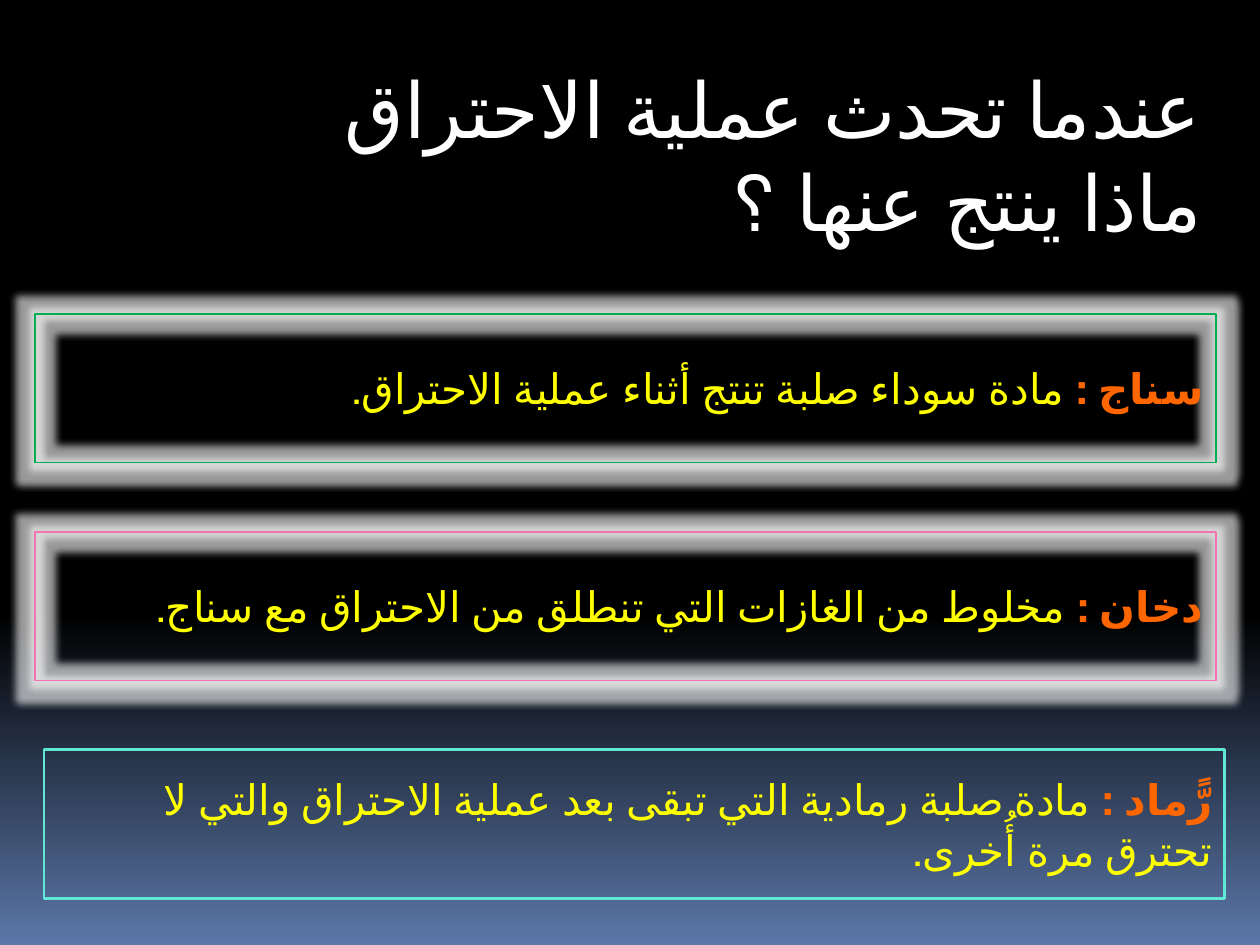
"""Build a slide on the products of combustion, with a title and three boxes."""
import copy
import pptx
import pptx.dml.color
import pptx.enum.lang
import pptx.enum.shapes
import pptx.enum.text
import pptx.oxml
import pptx.util

WIDE, HIGH = 10, 7.5
HALO = (
    '<a:effectLst xmlns:a="http://schemas.openxmlformats.org/drawingml/2006/main">'
    '<a:glow rad="101600"><a:srgbClr val="FFFFFF"><a:alpha val="60000"/></a:srgbClr></a:glow>'
    '</a:effectLst>'
)


def hue(code):
    return pptx.dml.color.RGBColor.from_string(code)


def write(para, text, size=24, color="FFFFFF", bold=False, face="Calibri"):
    run = para.add_run()
    run.text = text
    font = run.font
    font.size, font.bold, font.name = pptx.util.Pt(size), bold, face
    font.color.rgb = hue(color)
    font.language_id = pptx.enum.lang.MSO_LANGUAGE_ID.ARABIC


class Page:
    def __init__(self, deck):
        self.deck = deck
        deck.slide_width = pptx.util.Inches(WIDE)
        deck.slide_height = pptx.util.Inches(HIGH)
        self.slide = deck.slides.add_slide(deck.slide_layouts[5])
        self.term, self.body = "FF6600", "FFFF00"

    def place(self, x, y, w, h):
        wide, high = self.deck.slide_width, self.deck.slide_height
        return [round(part * full) for part, full in zip((x, y, w, h), (wide, high) * 2)]

    def para(self, frame):
        para = frame.paragraphs[0]
        para.alignment = pptx.enum.text.PP_ALIGN.RIGHT
        para._p.get_or_add_pPr().set("rtl", "1")
        return para

    def ground(self, stops, angle):
        fill = self.slide.background.fill
        fill.gradient()
        fill.gradient_angle = angle
        marks = self.slide._element.xpath(".//p:bg//a:gsLst")[0]
        while len(marks) < len(stops):
            marks.append(copy.deepcopy(marks[0]))
        for stop, (spot, color) in zip(fill.gradient_stops, stops):
            stop.position, stop.color.rgb = spot, hue(color)

    def title(self, text, area):
        shape = self.slide.shapes.title
        shape.left, shape.top, shape.width, shape.height = self.place(*area)
        frame = shape.text_frame
        frame.word_wrap = True
        frame.auto_size = pptx.enum.text.MSO_AUTO_SIZE.SHAPE_TO_FIT_TEXT
        frame.vertical_anchor = pptx.enum.text.MSO_ANCHOR.TOP
        write(self.para(frame), text, size=44)

    def box(self, term, text, area, color, width, halo):
        kind = pptx.enum.shapes.MSO_SHAPE.RECTANGLE
        shape = self.slide.shapes.add_shape(kind, *self.place(*area))
        shape.fill.background()
        shape.line.color.rgb = hue(color)
        shape.line.width = pptx.util.Pt(width)
        if halo:
            shape._element.spPr.append(pptx.oxml.parse_xml(HALO))
        else:
            shape.shadow.inherit = False
        frame = shape.text_frame
        frame.word_wrap = True
        frame.vertical_anchor = pptx.enum.text.MSO_ANCHOR.MIDDLE
        para = self.para(frame)
        write(para, term + " : ", color=self.term, bold=True)
        write(para, text, color=self.body)


def main():
    deck = pptx.Presentation()
    page = Page(deck)
    page.ground([(0, "000000"), (0.65, "000000"), (1, "5B77A8")], 270)
    page.title("عندما تحدث عملية الاحتراق ماذا ينتج عنها ؟",
               (1.77 / WIDE, 0.44 / HIGH, 7.87 / WIDE, 1.58 / HIGH))
    facts = [
        ("سناج", "مادة سوداء صلبة تنتج أثناء عملية الاحتراق.", 0.28, "00B050", 0.94, True),
        ("دخان", "مخلوط من الغازات التي تنطلق من الاحتراق مع سناج.", 0.28, "F273AF", 0.94, True),
        ("رًّماد", "مادة صلبة رمادية التي تبقى بعد عملية الاحتراق والتي لا تحترق مرة أُخرى.",
         0.35, "5FE8D6", 1.5, False),
    ]
    for row, (term, text, left, color, width, halo) in enumerate(facts):
        area = (left / WIDE, (2.49 + 1.73 * row) / HIGH, 9.37 / WIDE, 1.18 / HIGH)
        page.box(term, text, area, color, width, halo)
    deck.save("out.pptx")


if __name__ == "__main__":
    main()
